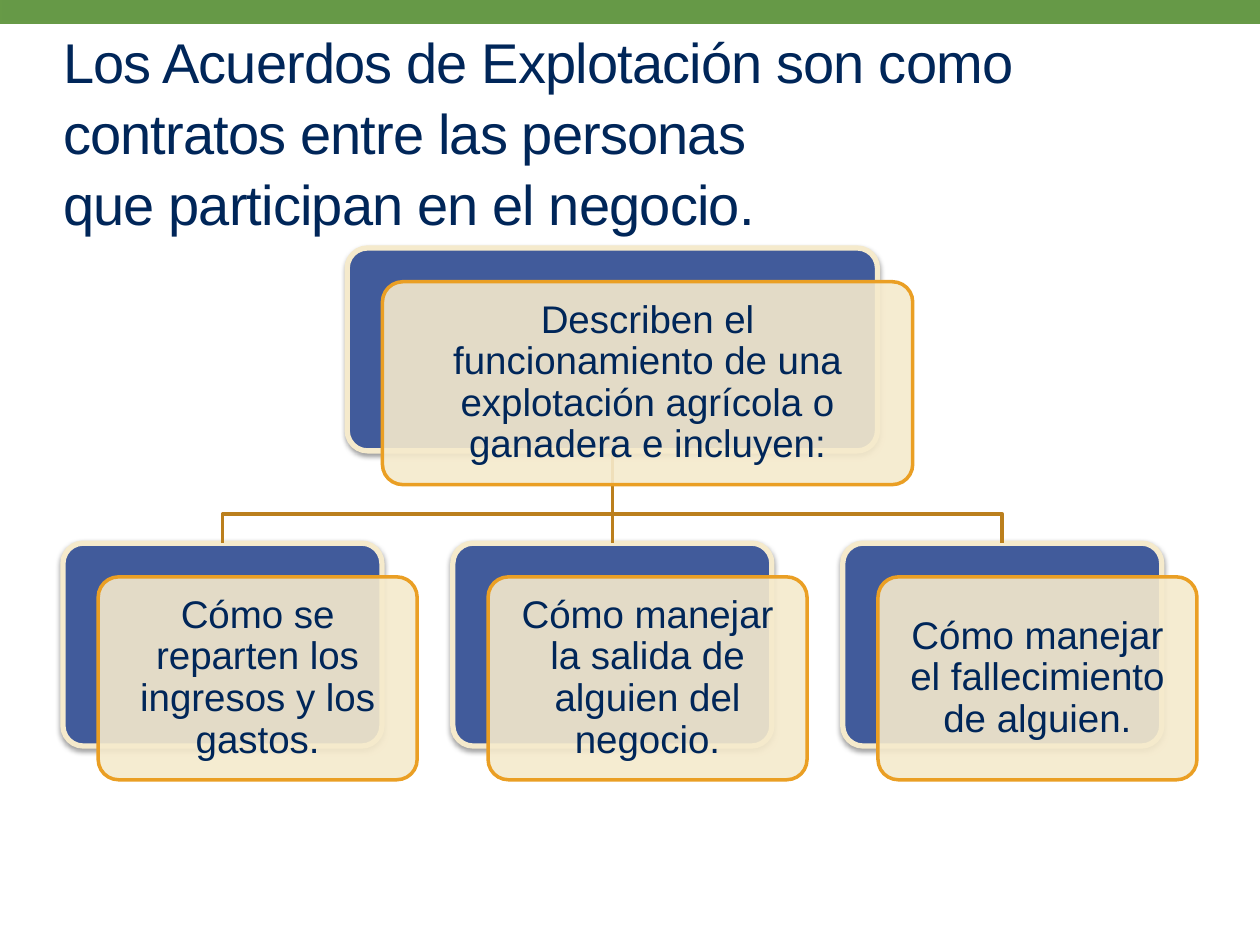
"""Build a slide with a title and a two-level hierarchy of layered cards."""
from dataclasses import dataclass

import pptx
import pptx.dml.color
import pptx.enum.shapes
import pptx.enum.text
import pptx.oxml
import pptx.oxml.ns
import pptx.util

Cm, Pt = pptx.util.Cm, pptx.util.Pt
MSO_SHAPE = pptx.enum.shapes.MSO_SHAPE
PP_ALIGN = pptx.enum.text.PP_ALIGN
MSO_ANCHOR = pptx.enum.text.MSO_ANCHOR

NAVY, BLUE, CREAM, ORANGE, BROWN = "002659", "415B9B", "F5EACC", "EA9F24", "BB7F1D"
LEFT, PITCH, CHILD_W, ROOT_W, CARD_H = 1.27, 7.86, 6.43, 10.69, 4.09
ROOT_TOP, CHILD_TOP, BEND_Y = 5.0, 10.95, 10.36
SHIFT_X, SHIFT_Y = 0.71, 0.68


@dataclass
class Card:
    """A card of the hierarchy, in centimetres."""
    text: str
    x: float
    y: float
    w: float

    @property
    def mid(self) -> float:
        """Return the horizontal centre."""
        return self.x + self.w / 2


def rgb(color: str) -> pptx.dml.color.RGBColor:
    """Return the colour for a hex string."""
    return pptx.dml.color.RGBColor.from_string(color)


def add_box(s, kind, x: float, y: float, w: float, h: float, fill: str, line: str, width: float):
    """Add a filled and outlined shape without a shadow."""
    sp = s.shapes.add_shape(kind, Cm(x), Cm(y), Cm(w), Cm(h))
    sp.shadow.inherit = False
    sp.fill.solid()
    sp.fill.fore_color.rgb = rgb(fill)
    sp.line.color.rgb = rgb(line)
    sp.line.width = Pt(width)
    return sp


def add_back(s, card: Card):
    """Add the blue back layer of a card with its soft shadow."""
    sp = add_box(s, MSO_SHAPE.ROUNDED_RECTANGLE, card.x, card.y, card.w, CARD_H, BLUE, CREAM, 3)
    sp.adjustments[0] = 0.1
    effects = sp._element.spPr.find(pptx.oxml.ns.qn("a:effectLst"))
    effects.append(pptx.oxml.parse_xml(
        f'<a:outerShdw {pptx.oxml.ns.nsdecls("a")} blurRad="{Pt(3.1)}" dist="{Pt(1.6)}" '
        'dir="5400000" rotWithShape="0"><a:srgbClr val="000000"><a:alpha val="38000"/>'
        '</a:srgbClr></a:outerShdw>'))
    return sp


def add_front(s, card: Card) -> None:
    """Add the translucent front layer of a card with its text."""
    sp = add_box(s, MSO_SHAPE.ROUNDED_RECTANGLE, card.x + SHIFT_X, card.y + SHIFT_Y,
                 card.w, CARD_H, CREAM, ORANGE, 2)
    sp.adjustments[0] = 0.1
    color = sp._element.spPr.find(pptx.oxml.ns.qn("a:solidFill"))[0]
    color.append(pptx.oxml.parse_xml(f'<a:alpha {pptx.oxml.ns.nsdecls("a")} val="90000"/>'))
    tf = sp.text_frame
    tf.word_wrap = True
    tf.vertical_anchor = MSO_ANCHOR.MIDDLE
    tf.margin_left = tf.margin_right = tf.margin_top = tf.margin_bottom = Cm(0.36)
    tf.text = card.text
    p = tf.paragraphs[0]
    p.alignment = PP_ALIGN.CENTER
    p.line_spacing = 0.9
    format_runs(p, 22)


def format_runs(p, size: float) -> None:
    """Set the font of every run in a paragraph."""
    for r in p.runs:
        r.font.name = "Arial"
        r.font.size = Pt(size)
        r.font.color.rgb = rgb(NAVY)


def style_line(sp) -> None:
    """Set the stroke of a hierarchy line."""
    sp.line.color.rgb = rgb(BROWN)
    sp.line.width = Pt(2)


def add_branch(s, root: Card, child: Card) -> None:
    """Add a bent line from the root to a child."""
    fb = s.shapes.build_freeform(Cm(root.mid), Cm(root.y + CARD_H))
    fb.add_line_segments([(Cm(root.mid), Cm(BEND_Y)), (Cm(child.mid), Cm(BEND_Y)),
                          (Cm(child.mid), Cm(child.y))], close=False)
    sp = fb.convert_to_shape()
    sp.shadow.inherit = False
    sp.fill.background()
    style_line(sp)


def add_stem(s, start, end) -> None:
    """Join the bottom of one shape to the top of another."""
    sp = s.shapes.add_connector(pptx.enum.shapes.MSO_CONNECTOR.STRAIGHT, 0, 0, 0, 0)
    sp.begin_connect(start, 2)
    sp.end_connect(end, 0)
    style_line(sp)
    sp._element.spPr.append(pptx.oxml.parse_xml(f'<a:effectLst {pptx.oxml.ns.nsdecls("a")}/>'))


def add_title(s, text: str) -> None:
    """Fill and place the title placeholder."""
    sp = s.shapes.title
    sp.left, sp.top, sp.width, sp.height = Cm(1.27), Cm(1.32), Cm(20.14), Cm(2.62)
    tf = sp.text_frame
    tf.text = text
    tf.word_wrap = True
    tf.auto_size = pptx.enum.text.MSO_AUTO_SIZE.NONE
    tf.vertical_anchor = MSO_ANCHOR.MIDDLE
    tf.margin_left = tf.margin_right = tf.margin_top = tf.margin_bottom = 0
    p = tf.paragraphs[0]
    p.alignment = PP_ALIGN.LEFT
    p.line_spacing = 1.05
    format_runs(p, 32)
    for r in p.runs:
        r.font._element.set("spc", "-50")


def main() -> None:
    """Build and save the slide."""
    prs = pptx.Presentation()
    prs.slide_width, prs.slide_height = Cm(25.4), Cm(19.05)
    s = prs.slides.add_slide(prs.slide_layouts[5])
    add_box(s, MSO_SHAPE.RECTANGLE, 0, -0.05, 25.43, 0.51, "669947", "679A47", 2)
    add_title(s, "Los Acuerdos de Explotación son como contratos entre las personas"
                 "\vque participan en el negocio.")

    texts = ["Cómo se reparten los ingresos y los gastos.",
             "Cómo manejar la salida de alguien del negocio.",
             "Cómo manejar el fallecimiento de alguien."]
    children = [Card(t, LEFT + i * PITCH, CHILD_TOP, CHILD_W) for i, t in enumerate(texts)]
    root = Card("Describen el funcionamiento de una explotación agrícola o ganadera e incluyen:",
                children[1].mid - ROOT_W / 2, ROOT_TOP, ROOT_W)
    cards = [root, *children]

    backs = [add_back(s, card) for card in cards]
    add_branch(s, root, children[0])
    add_stem(s, backs[0], backs[2])
    add_branch(s, root, children[2])
    for card in cards:
        add_front(s, card)
    prs.save("out.pptx")


if __name__ == "__main__":
    main()
